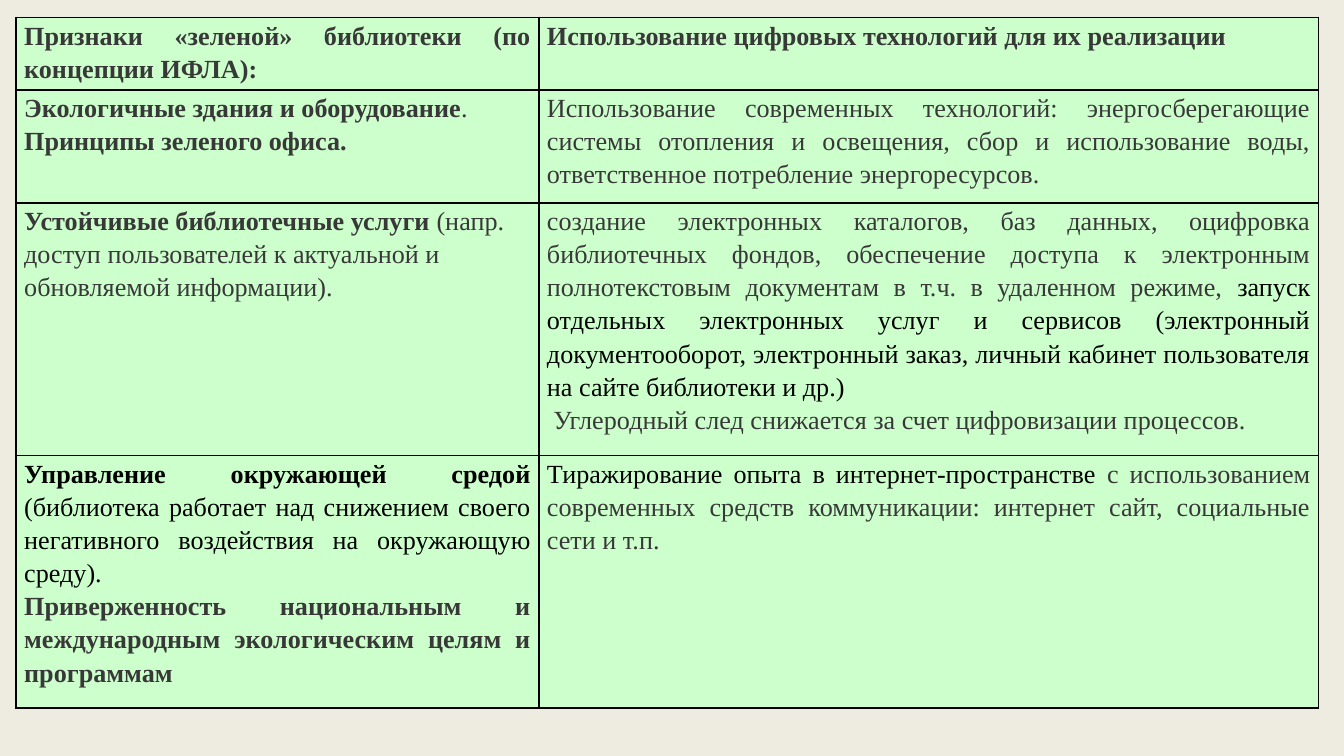
"""Build a slide with a table on the green library and digital technologies."""
from lxml import etree
from pptx import Presentation
from pptx import util as u
from pptx.dml.color import RGBColor
from pptx.enum import text
from pptx.oxml.ns import qn

COLOURS = {"paper": "EEECE1", "cell": "CCFFCC", "grey": "383838", "black": "000000"}
JUSTIFY, LEFT = text.PP_ALIGN.JUSTIFY, text.PP_ALIGN.LEFT
BOLD, PLAIN = ("grey", True), ("grey", False)
BLACK_BOLD, BLACK = ("black", True), ("black", False)

COLUMN_WIDTHS = [3.89, 5.8]
ROW_HEIGHTS = [0.54, 0.84, 1.88, 1.88]

FEATURES = [
    [
        [(JUSTIFY, [("Признаки «зеленой» библиотеки (по концепции ИФЛА): ", BOLD)])],
        [(JUSTIFY, [("Использование цифровых технологий для их реализации", BOLD)])],
    ],
    [
        [
            (JUSTIFY, [("Экологичные здания и оборудование", BOLD), (".", PLAIN)]),
            (JUSTIFY, [("Принципы зеленого офиса.", BOLD)]),
        ],
        [(JUSTIFY, [("Использование современных технологий: энергосберегающие системы "
                     "отопления и освещения, сбор и использование воды, ответственное "
                     "потребление энергоресурсов.", PLAIN)])],
    ],
    [
        [(LEFT, [("Устойчивые библиотечные услуги ", BOLD),
                 ("(напр. доступ пользователей к актуальной и обновляемой "
                  "информации).", PLAIN)])],
        [
            (JUSTIFY, [("создание электронных каталогов, баз данных, оцифровка "
                        "библиотечных фондов, обеспечение доступа к электронным "
                        "полнотекстовым документам в т.ч. в удаленном режиме, ", PLAIN),
                       ("запуск отдельных электронных услуг и сервисов (электронный "
                        "документооборот, электронный заказ, личный кабинет "
                        "пользователя на сайте библиотеки и др.)", BLACK)]),
            (JUSTIFY, [(" Углеродный след снижается за счет цифровизации процессов.",
                        PLAIN)]),
        ],
    ],
    [
        [
            (JUSTIFY, [("Управление окружающей средой ", BLACK_BOLD),
                       ("(библиотека работает над снижением своего негативного "
                        "воздействия на окружающую среду). ", BLACK)]),
            (JUSTIFY, [("Приверженность национальным и международным экологическим "
                        "целям и программам", BOLD)]),
        ],
        [(JUSTIFY, [("Тиражирование опыта в интернет-пространстве ", BLACK),
                    ("с использованием современных средств коммуникации: интернет "
                     "сайт, социальные сети и т.п.", PLAIN)])],
    ],
]


class Painter:
    def __init__(self, slide, font="Times New Roman", size=14):
        self.slide, self.font, self.size = slide, font, size

    def colour(self, name):
        return RGBColor.from_string(COLOURS[name])

    def background(self, name):
        fill = self.slide.background.fill
        fill.solid()
        fill.fore_color.rgb = self.colour(name)

    def table(self, left, top, widths, heights, contents):
        grid = self.slide.shapes.add_table(
            len(heights), len(widths), u.Inches(left), u.Inches(top),
            u.Inches(sum(widths)), u.Inches(sum(heights))).table
        grid.first_row = grid.horz_banding = False
        for column, width in zip(grid.columns, widths):
            column.width = u.Inches(width)
        for row, height, entries in zip(grid.rows, heights, contents):
            row.height = u.Inches(height)
            for cell, paragraphs in zip(row.cells, entries):
                self.cell(cell, paragraphs)

    def cell(self, cell, paragraphs):
        cell.margin_left = cell.margin_right = u.Inches(0.06)
        cell.margin_top = cell.margin_bottom = 0
        self.borders(cell)
        cell.fill.solid()
        cell.fill.fore_color.rgb = self.colour("cell")
        frame = cell.text_frame
        for index, (alignment, runs) in enumerate(paragraphs):
            paragraph = frame.add_paragraph() if index else frame.paragraphs[0]
            paragraph.alignment = alignment
            paragraph.line_spacing = 1.15
            for words, style in runs:
                self.run(paragraph, words, *style)

    def run(self, paragraph, words, colour, bold):
        run = paragraph.add_run()
        run.text = words
        run.font.name, run.font.size = self.font, u.Pt(self.size)
        run.font.bold = bold
        run.font.color.rgb = self.colour(colour)

    def borders(self, cell):
        properties = cell._tc.get_or_add_tcPr()
        for side in ("lnL", "lnR", "lnT", "lnB"):
            line = etree.SubElement(properties, qn(f"a:{side}"), w=str(u.Pt(1)))
            fill = etree.SubElement(line, qn("a:solidFill"))
            etree.SubElement(fill, qn("a:srgbClr"), val=COLOURS["black"])


def main():
    deck = Presentation()
    deck.slide_width = u.Inches(10)
    deck.slide_height = deck.slide_width * 9 // 16
    painter = Painter(deck.slides.add_slide(deck.slide_layouts[6]))
    painter.background("paper")
    painter.table(0.12, 0.13, COLUMN_WIDTHS, ROW_HEIGHTS, FEATURES)
    deck.save("out.pptx")


if __name__ == "__main__":
    main()
